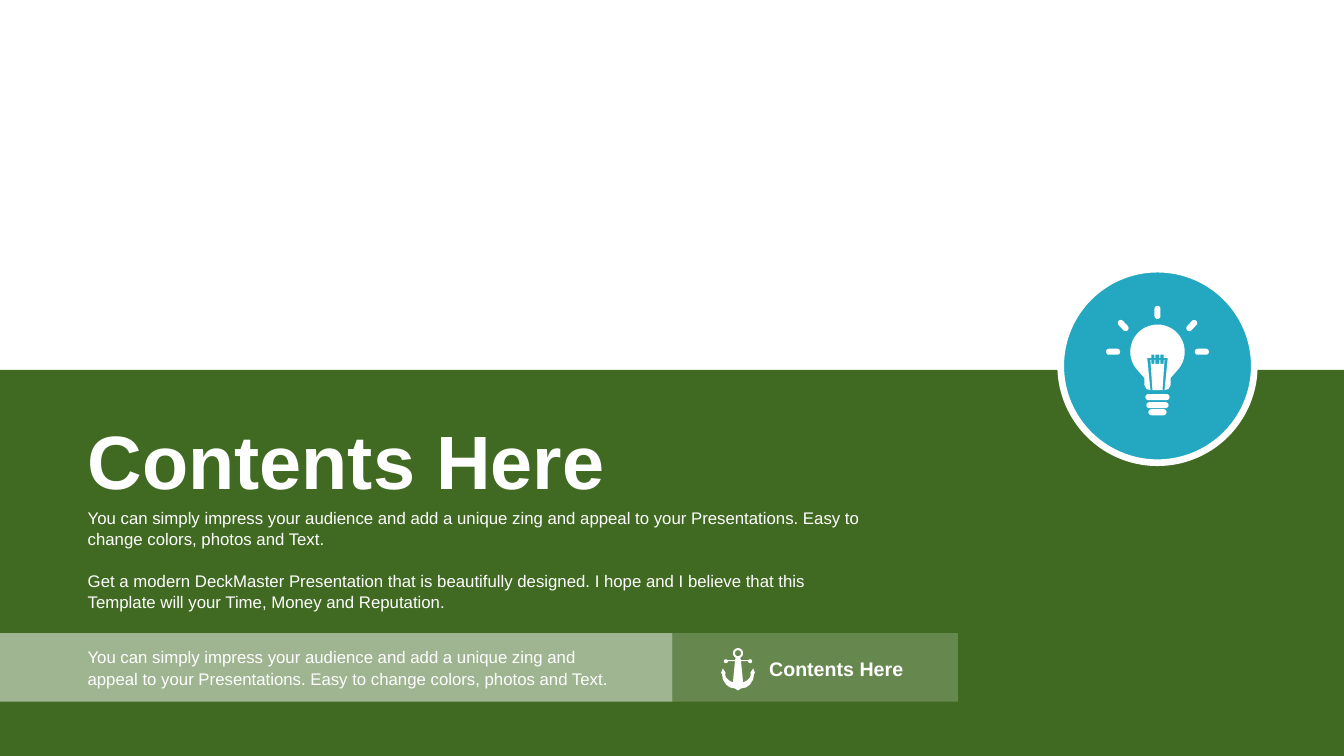
from dataclasses import dataclass
from math import cos, radians, sin
from lxml.etree import SubElement
from pptx import Presentation
from pptx.dml.color import RGBColor
from pptx.enum.shapes import MSO_SHAPE
from pptx.enum.text import MSO_ANCHOR, MSO_AUTO_SIZE, PP_ALIGN
from pptx.oxml.ns import qn
from pptx.util import Inches, Pt


@dataclass(frozen=True)
class Theme:
    font: str = "Arial"
    white: RGBColor = RGBColor(0xFF, 0xFF, 0xFF)
    green: RGBColor = RGBColor(0x40, 0x69, 0x22)
    teal: RGBColor = RGBColor(0x24, 0xA8, 0xC2)
    head: float = 54
    label: float = 14
    body: float = 12
    ring: float = 4.75
    lead: float = 1.05
    gap: float = 14.5


theme = Theme()
wide, high = 13.33, 7.5
margin = 0.77
split, strip_top, strip_high = 6.67, 6.28, 0.68

heading = "Contents Here"
pitch = ("You can simply impress your audience and add a unique zing and appeal "
         "to your Presentations. Easy to change colors, photos and Text.")
promise = ("Get a modern DeckMaster Presentation that is beautifully designed. "
           "I hope and I believe that this Template will your Time, Money and Reputation.")

bulb_x, bulb_y, bulb_r = 11.48, 3.49, 0.27
rays = [(-0.44, 3.49, 0.14, 0), (0.44, 3.49, 0.14, 0), (0, 3.1, 0.13, 90),
        (-0.34, 3.23, 0.13, 47), (0.34, 3.23, 0.13, -47)]
base = [(0, 3.94, 0.24, 0), (0, 4.02, 0.22, 0), (0, 4.09, 0.18, 0)]
neck = [(0.13, 3.75), (0.13, 3.82), (0.11, 3.86), (0.07, 3.87)]
wire = [(0.02, 3.52), (0.02, 3.55), (0.03, 3.55), (0.03, 3.52), (0.06, 3.52),
        (0.06, 3.55), (0.1, 3.55), (0.1, 3.57), (0.07, 3.87), (0.05, 3.87),
        (0.07, 3.57), (0.06, 3.57), (0.06, 3.61), (0.03, 3.61), (0.03, 3.57),
        (0.02, 3.57), (0.02, 3.61)]

anchor_x, ring_y = 7.32, 6.48
cross = [(0.02, 6.52), (0.03, 6.55), (0.1, 6.55)]
knob = (0.12, 6.56, 0.02)
fluke = [(0.1, 6.56), (0.03, 6.56), (0.05, 6.77), (0.09, 6.75), (0.12, 6.72),
         (0.13, 6.68), (0.12, 6.68), (0.15, 6.63), (0.17, 6.68), (0.16, 6.68),
         (0.15, 6.74), (0.12, 6.79), (0.08, 6.82), (0.03, 6.83), (0, 6.85)]


def arc(x, y, r, start, stop, steps=36):
    turns = [radians(start + (stop - start) * n / steps) for n in range(steps + 1)]
    return [(x + r * cos(t), y + r * sin(t)) for t in turns]


def pill(x, y, length, turn, r=0.03):
    reach = length / 2 - r
    dx, dy = reach * cos(radians(turn)), reach * sin(radians(turn))
    return (arc(x + dx, y + dy, r, turn - 90, turn + 90, 8)
            + arc(x - dx, y - dy, r, turn + 90, turn + 270, 8))


def mirror(half, mid):
    return ([(mid + x, y) for x, y in half]
            + [(mid - x, y) for x, y in reversed(half)])


def paint(shape, color, alpha=None):
    shape.shadow.inherit = False
    shape.fill.solid()
    shape.fill.fore_color.rgb = color
    shape.line.fill.background()
    if alpha:
        tone = shape.element.find(".//" + qn("a:srgbClr"))
        SubElement(tone, qn("a:alpha"), val=str(alpha * 1000))
    return shape


def place(shape, *box):
    shape.left, shape.top, shape.width, shape.height = map(Inches, box)


def block(kind, box, color, alpha=None):
    shape = slide.shapes.add_shape(kind, *map(Inches, box))
    return paint(shape, color, alpha)


def trace(loops):
    loops = [[(Inches(x), Inches(y)) for x, y in loop] for loop in loops]
    pen = slide.shapes.build_freeform(*loops[0][0])
    for loop in loops:
        pen.move_to(*loop[0])
        pen.add_line_segments(loop[1:], close=True)
    paint(pen.convert_to_shape(), theme.white)


def write(shape, lines, size, bold=False, lead=1.0, anchor=MSO_ANCHOR.TOP):
    frame = shape.text_frame
    frame.text = "\n".join(lines)
    frame.word_wrap = True
    frame.auto_size = MSO_AUTO_SIZE.NONE
    frame.vertical_anchor = anchor
    for rank, para in enumerate(frame.paragraphs):
        para.alignment = PP_ALIGN.LEFT
        para.line_spacing = lead
        para.space_before = Pt(theme.gap if rank else 0)
        para.font.name = theme.font
        para.font.size = Pt(size)
        para.font.bold = bold
        para.font.color.rgb = theme.white


deck = Presentation()
deck.slide_width, deck.slide_height = Inches(wide), Inches(high)
slide = deck.slides.add_slide(deck.slide_layouts[1])
title, body = slide.placeholders

ground = block(MSO_SHAPE.RECTANGLE, (0, 3.67, wide, high - 3.67), theme.green)
title.element.addprevious(ground.element)
disc = block(MSO_SHAPE.OVAL, (10.52, 2.67, 1.92, 1.92), theme.teal)
disc.line.color.rgb = theme.white
disc.line.width = Pt(theme.ring)

place(title, margin, 4.06, 6.5, 1.01)
write(title, [heading], theme.head, bold=True)
place(body, margin, 4.98, 8, 1.11)
write(body, [pitch, promise], theme.body, lead=theme.lead)
for para in body.text_frame.paragraphs:
    props = para._p.get_or_add_pPr()
    props.set("marL", "0")
    props.set("indent", "0")
    SubElement(props, qn("a:buNone"))

for left, width, alpha in [(split, 2.83, 20), (0, split, 50)]:
    block(MSO_SHAPE.RECTANGLE, (left, strip_top, width, strip_high), theme.white, alpha)
for box, text, size, bold, lead in [
        ((margin, 6.37, 5.59, 0.5), pitch, theme.body, False, theme.lead),
        ((7.53, 6.46, 1.97, 0.34), heading, theme.label, True, 1.0)]:
    note = slide.shapes.add_textbox(*map(Inches, box))
    write(note, [text], size, bold, lead, MSO_ANCHOR.MIDDLE)

bars = [pill(bulb_x + dx, y, length, turn) for dx, y, length, turn in rays + base]
glass = arc(bulb_x, bulb_y, bulb_r, 135, 405) + mirror(neck, bulb_x)
trace([glass, mirror(wire, bulb_x), *bars])

side = arc(0, ring_y, 0.05, -90, 60, 12) + cross + arc(*knob, 200, 520, 12) + fluke
trace([mirror(side, anchor_x), arc(anchor_x, ring_y, 0.03, 0, 360)])

deck.save("out.pptx")
